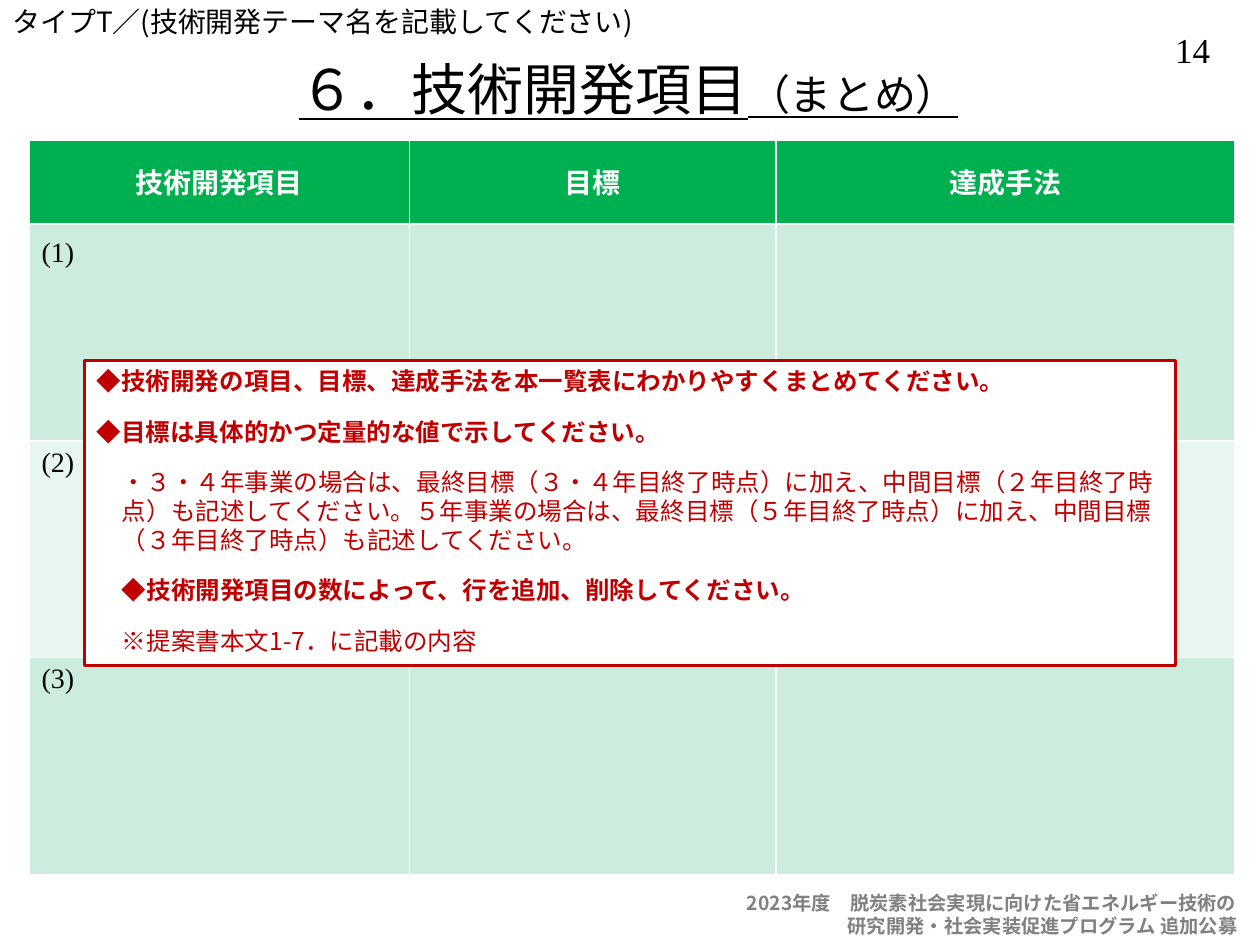
from dataclasses import dataclass

from lxml.etree import SubElement
from pptx import Presentation
from pptx.dml.color import RGBColor
from pptx.enum.text import MSO_ANCHOR, MSO_AUTO_SIZE, PP_ALIGN
from pptx.oxml.ns import qn
from pptx.util import Inches, Pt


@dataclass(frozen=True)
class Theme:
    ink: str = "000000"
    paper: str = "FFFFFF"
    header: str = "00B050"
    band_dark: str = "CCECDE"
    band_light: str = "E7F6EF"
    guidance: str = "C00000"
    footer: str = "808080"
    japanese: str = "Noto Sans CJK JP"
    latin: str = "Times New Roman"
    title_size: int = 32
    subtitle_size: int = 24
    number_size: int = 20
    body_size: int = 16
    guidance_size: int = 14
    footer_size: int = 11
    line_ratio: float = 1.19


@dataclass(frozen=True)
class Style:
    size: int
    color: str
    bold: bool = False
    font: str = "Noto Sans CJK JP"
    underline: bool = False


@dataclass(frozen=True)
class Line:
    text: str
    bold: bool = False
    indent: float = 0
    space_before: int = 0


@dataclass(frozen=True)
class Box:
    left: float
    top: float
    width: float
    height: float

    def lengths(self) -> tuple:
        return tuple(map(Inches, (self.left, self.top, self.width, self.height)))


THEME = Theme()
HEADINGS = ("技術開発項目", "目標", "達成手法")
ITEMS = ("(1)　", "(2)", "(3)")
COLUMN_WIDTHS = (3.02, 2.91, 3.64)
HEADER_HEIGHT, ITEM_HEIGHT = 0.68, 1.72
GUIDANCE = (
    Line("◆技術開発の項目、目標、達成手法を本一覧表にわかりやすくまとめてください。", True),
    Line("◆目標は具体的かつ定量的な値で示してください。", True, 0, 12),
    Line("・３・４年事業の場合は、最終目標（３・４年目終了時点）に加え、中間目標（２年目終了時点）"
         "も記述してください。５年事業の場合は、最終目標（５年目終了時点）に加え、中間目標"
         "（３年目終了時点）も記述してください。", False, 0.2, 12),
    Line("◆技術開発項目の数によって、行を追加、削除してください。", True, 0.2, 12),
    Line("※提案書本文1-7．に記載の内容", False, 0.2, 12),
)
FOOTER = (
    Line("2023年度　脱炭素社会実現に向けた省エネルギー技術の", True),
    Line("研究開発・社会実装促進プログラム 追加公募", True, 0.8),
)


def style_run(run, style: Style) -> None:
    font = run.font
    font.size, font.bold, font.underline = Pt(style.size), style.bold, style.underline
    font.color.rgb = RGBColor.from_string(style.color)
    font.name = style.font
    SubElement(run.font._element, qn("a:ea"), typeface=THEME.japanese)


def write_lines(frame, lines: tuple, size: int, color: str) -> None:
    """Fill a frame with one paragraph per line at a fixed line pitch."""
    frame.text = "\n".join(line.text for line in lines)
    for paragraph, line in zip(frame.paragraphs, lines):
        paragraph.alignment = PP_ALIGN.LEFT
        paragraph.line_spacing = Pt(round(size * THEME.line_ratio, 1))
        paragraph.space_before = Pt(line.space_before)
        if line.indent:
            properties = paragraph._p.get_or_add_pPr()
            properties.set("marL", str(Inches(line.indent)))
            properties.set("indent", "0")
        style_run(paragraph.runs[0], Style(size, color, line.bold))


def add_text(slide, box: Box, lines: tuple, size: int, color: str) -> None:
    frame = slide.shapes.add_textbox(*box.lengths()).text_frame
    frame.word_wrap = True
    write_lines(frame, lines, size, color)


def add_page_number(slide) -> None:
    frame = slide.shapes.add_textbox(*Box(9.14, 0.18, 0.65, 0.43).lengths()).text_frame
    frame.text = "14"
    frame.paragraphs[0].alignment = PP_ALIGN.CENTER
    style_run(frame.paragraphs[0].runs[0],
              Style(THEME.number_size, THEME.ink, font=THEME.latin))


def set_title(slide) -> None:
    title = slide.shapes.title
    title.left, title.top, title.width, title.height = Box(0.74, 0.35, 8.5, 0.7).lengths()
    frame = title.text_frame
    frame.auto_size = MSO_AUTO_SIZE.NONE
    frame.vertical_anchor = MSO_ANCHOR.MIDDLE
    frame.text = "６．技術開発項目"
    heading = frame.paragraphs[0]
    heading.alignment = PP_ALIGN.CENTER
    heading.add_run().text = "（まとめ）"
    for run, size in zip(heading.runs, (THEME.title_size, THEME.subtitle_size)):
        style_run(run, Style(size, THEME.ink, underline=True))


def set_borders(cell, top: float, bottom: float) -> None:
    properties = cell._tc.get_or_add_tcPr()
    for side, points in (("L", 1), ("R", 1), ("T", top), ("B", bottom)):
        border = SubElement(properties, qn(f"a:ln{side}"), w=str(Pt(points)))
        fill = SubElement(border, qn("a:solidFill"))
        SubElement(fill, qn("a:srgbClr"), val=THEME.paper)


def fill_cell(cell, text: str, fill: str, is_header: bool, top: float, bottom: float) -> None:
    set_borders(cell, top, bottom)
    cell.fill.solid()
    cell.fill.fore_color.rgb = RGBColor.from_string(fill)
    cell.vertical_anchor = MSO_ANCHOR.MIDDLE if is_header else MSO_ANCHOR.TOP
    if not text:
        return
    cell.text_frame.text = text
    paragraph = cell.text_frame.paragraphs[0]
    paragraph.alignment = PP_ALIGN.CENTER if is_header else PP_ALIGN.LEFT
    color = THEME.paper if is_header else THEME.ink
    style_run(paragraph.runs[0], Style(THEME.body_size, color, is_header, THEME.latin))


def add_summary_table(slide) -> None:
    rows = [HEADINGS] + [(item, "", "") for item in ITEMS]
    box = Box(0.23, 1.1, sum(COLUMN_WIDTHS), HEADER_HEIGHT + ITEM_HEIGHT * len(ITEMS))
    table = slide.shapes.add_table(len(rows), len(HEADINGS), *box.lengths()).table
    for column, width in zip(table.columns, COLUMN_WIDTHS):
        column.width = Inches(width)
    for index, texts in enumerate(rows):
        is_header = index == 0
        table.rows[index].height = Inches(HEADER_HEIGHT if is_header else ITEM_HEIGHT)
        band = THEME.band_dark if index % 2 else THEME.band_light
        top = {0: 3, 1: 1.5}.get(index, 1)
        for cell, text in zip(table.rows[index].cells, texts):
            fill_cell(cell, text, THEME.header if is_header else band,
                      is_header, top, 1.5 if is_header else 1)


def add_guidance(slide) -> None:
    panel = slide.shapes.add_shape(1, *Box(0.67, 2.86, 8.66, 2.42).lengths())
    panel.shadow.inherit = False
    panel.fill.solid()
    panel.fill.fore_color.rgb = RGBColor.from_string(THEME.paper)
    panel.line.color.rgb = RGBColor.from_string(THEME.guidance)
    panel.line.width = Pt(1.5)
    panel.text_frame.word_wrap = True
    panel.text_frame.vertical_anchor = MSO_ANCHOR.TOP
    write_lines(panel.text_frame, GUIDANCE, THEME.guidance_size, THEME.guidance)


def main() -> None:
    deck = Presentation()
    deck.slide_width, deck.slide_height = Inches(10), Inches(7.5)
    slide = deck.slides.add_slide(deck.slide_layouts[5])
    add_page_number(slide)
    add_text(slide, Box(0, -0.01, 8.4, 0.37),
             (Line("タイプT／(技術開発テーマ名を記載してください)"),), THEME.body_size, THEME.ink)
    add_text(slide, Box(5.83, 7.03, 4.17, 0.47), FOOTER, THEME.footer_size, THEME.footer)
    set_title(slide)
    add_summary_table(slide)
    add_guidance(slide)
    deck.save("out.pptx")


if __name__ == "__main__":
    main()
